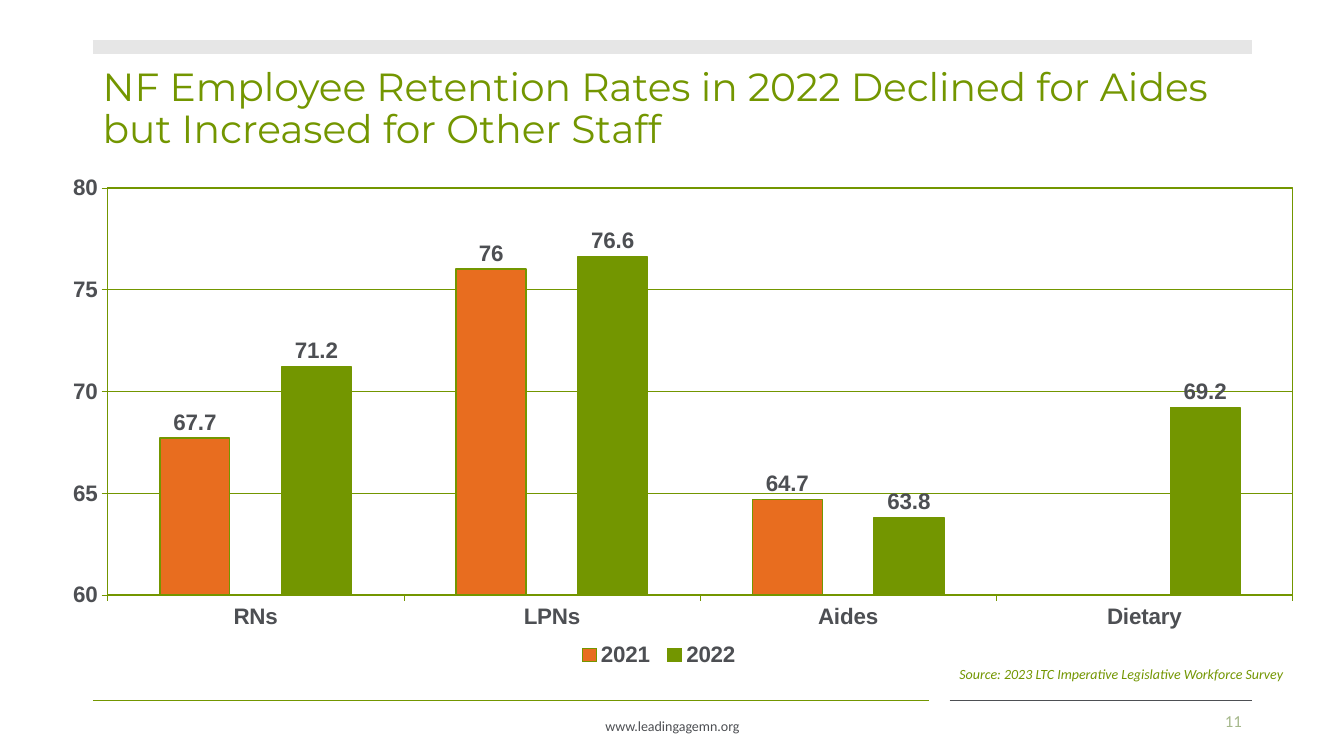
from lxml import etree
from pptx import Presentation
from pptx.chart.data import CategoryChartData
from pptx.dml.color import RGBColor
from pptx.enum.chart import (XL_CHART_TYPE, XL_LABEL_POSITION, XL_LEGEND_POSITION,
                             XL_TICK_LABEL_POSITION, XL_TICK_MARK)
from pptx.enum.shapes import MSO_CONNECTOR
from pptx.enum.text import MSO_ANCHOR, PP_ALIGN
from pptx.oxml import parse_xml
from pptx.oxml.ns import nsdecls, qn
from pptx.util import Cm, Pt

COLUMNS = XL_CHART_TYPE.COLUMN_CLUSTERED
TOP, MID = MSO_ANCHOR.TOP, MSO_ANCHOR.MIDDLE
LEFT, MIDDLE, RIGHT = PP_ALIGN.LEFT, PP_ALIGN.CENTER, PP_ALIGN.RIGHT
OUT, NONE = XL_TICK_MARK.OUTSIDE, XL_TICK_MARK.NONE
LOW = XL_TICK_LABEL_POSITION.LOW
ABOVE = XL_LABEL_POSITION.OUTSIDE_END
BOTTOM = XL_LEGEND_POSITION.BOTTOM
STRAIGHT = MSO_CONNECTOR.STRAIGHT

# Content
GREEN, GREY, PALE, ORANGE, SAGE = "739600", "4D4F53", "E6E6E6", "E86D1F", "A6B88C"

# x1, x2, y (cm), colour, weight (pt)
RULES = [
    (2.34, 23.42, 17.65, GREEN, 1),
    (23.93, 31.55, 17.65, GREY, 1),
    (2.34, 31.55, 1.19, PALE, 10),
]

# text, box (cm), size, font, colour, italic, align, anchor, line spacing
TEXTS = [
    ("NF Employee Retention Rates in 2022 Declined for Aides but Increased for Other Staff",
     (2.34, 1.17, 29.18, 3.18), 28, "Montserrat", GREEN, False, LEFT, MID, 0.9),
    ("www.leadingagemn.org",
     (11.23, 17.96, 11.43, 0.71), 10, "Calibri", GREY, False, MIDDLE, TOP, 1.0),
    ("Source: 2023 LTC Imperative Legislative Workforce Survey",
     (23.93, 16.64, 9.14, 0.69), 10, "Calibri", GREEN, True, LEFT, TOP, 1.0),
    ("11",
     (23.93, 17.65, 7.62, 1.02), 12, "Calibri", SAGE, False, RIGHT, MID, 1.0),
]

CHART_BOX = (1.27, 3.66, 31.32, 14.68)
STAFF = ["RNs", "LPNs", "Aides", "Dietary"]
# year, rates, colour, label format
YEARS = [
    ("2021", (67.7, 76, 64.7, None), ORANGE, "General"),
    ("2022", (71.2, 76.6, 63.8, 69.2), GREEN, "0.0"),
]
# Shares of the chart: x, y, width, height
PLOT = (0.046, 0.073, 0.954, 0.699)
KEY = (0.42, 0.85, 0.14, 0.05)


def paint(hue):
    return RGBColor.from_string(hue)


def stroke(line, hue, weight):
    line.color.rgb = paint(hue)
    line.width = Pt(weight)


def layout(box, inner=False):
    target = '<c:layoutTarget val="inner"/>' if inner else ""
    modes = '<c:xMode val="edge"/><c:yMode val="edge"/>'
    sizes = "".join(f'<c:{tag} val="{val}"/>' for tag, val in zip("xywh", box))
    return parse_xml(f'<c:layout {nsdecls("c")}><c:manualLayout>{target}{modes}{sizes}'
                     '</c:manualLayout></c:layout>')


def place(parent, index, item):
    for old in parent.findall(qn("c:layout")):
        parent.remove(old)
    parent.insert(index, item)


def add_text(slide, text, box, size, face, hue, slant, align, anchor, gap):
    frame = slide.shapes.add_textbox(*map(Cm, box)).text_frame
    frame.word_wrap = True
    frame.vertical_anchor = anchor
    para = frame.paragraphs[0]
    para.alignment = align
    para.line_spacing = gap
    run = para.add_run()
    run.text = text
    font = run.font
    font.size, font.name, font.italic = Pt(size), face, slant
    font.color.rgb = paint(hue)


def add_rule(slide, x1, x2, y, hue, weight):
    rule = slide.shapes.add_connector(STRAIGHT, Cm(x1), Cm(y), Cm(x2), Cm(y))
    stroke(rule.line, hue, weight)
    etree.SubElement(rule._element.spPr, qn("a:effectLst"))


def add_rates(slide):
    data = CategoryChartData()
    data.categories = STAFF
    for year, rates, _, _ in YEARS:
        data.add_series(year, rates)
    chart = slide.shapes.add_chart(COLUMNS, *map(Cm, CHART_BOX), data).chart
    chart.has_title = False
    font = chart.font
    font.name, font.size, font.bold = "Arial", Pt(16), True
    font.color.rgb = paint(GREY)

    # Bars and their labels
    plot = chart.plots[0]
    plot.gap_width, plot.overlap, plot.vary_by_categories = 150, -74, False
    for bars, (_, _, hue, style) in zip(plot.series, YEARS):
        bars.format.fill.solid()
        bars.format.fill.fore_color.rgb = paint(hue)
        stroke(bars.format.line, GREEN, 0.98)
        bars.invert_if_negative = False
        tags = bars.data_labels
        tags.show_value = True
        tags.position = ABOVE
        tags.number_format, tags.number_format_is_linked = style, False

    # Axes
    for axis in (chart.category_axis, chart.value_axis):
        axis.major_tick_mark, axis.minor_tick_mark = OUT, NONE
        stroke(axis.format.line, GREEN, 0.25)
    chart.category_axis.tick_label_position = LOW
    scale = chart.value_axis
    scale.minimum_scale, scale.maximum_scale, scale.major_unit = 60, 80, 5
    scale.has_major_gridlines = True
    stroke(scale.major_gridlines.format.line, GREEN, 0.25)
    scale.tick_labels.number_format = "0"
    scale.tick_labels.number_format_is_linked = False

    # Plot frame and legend
    area = chart._chartSpace.chart.plotArea
    place(area, 0, layout(PLOT, inner=True))
    area.append(parse_xml(
        f'<c:spPr {nsdecls("c", "a")}><a:noFill/><a:ln w="{Pt(1)}"><a:solidFill>'
        f'<a:srgbClr val="{GREEN}"/></a:solidFill></a:ln></c:spPr>'))
    chart.has_legend = True
    chart.legend.position = BOTTOM
    chart.legend.include_in_layout = False
    place(chart.legend._element, 1, layout(KEY))


# Build the slide
deck = Presentation()
deck.slide_width, deck.slide_height = Cm(33.87), Cm(19.05)
slide = deck.slides.add_slide(deck.slide_layouts[6])
for rule in RULES:
    add_rule(slide, *rule)
add_rates(slide)
for text in TEXTS:
    add_text(slide, *text)
deck.save("out.pptx")
